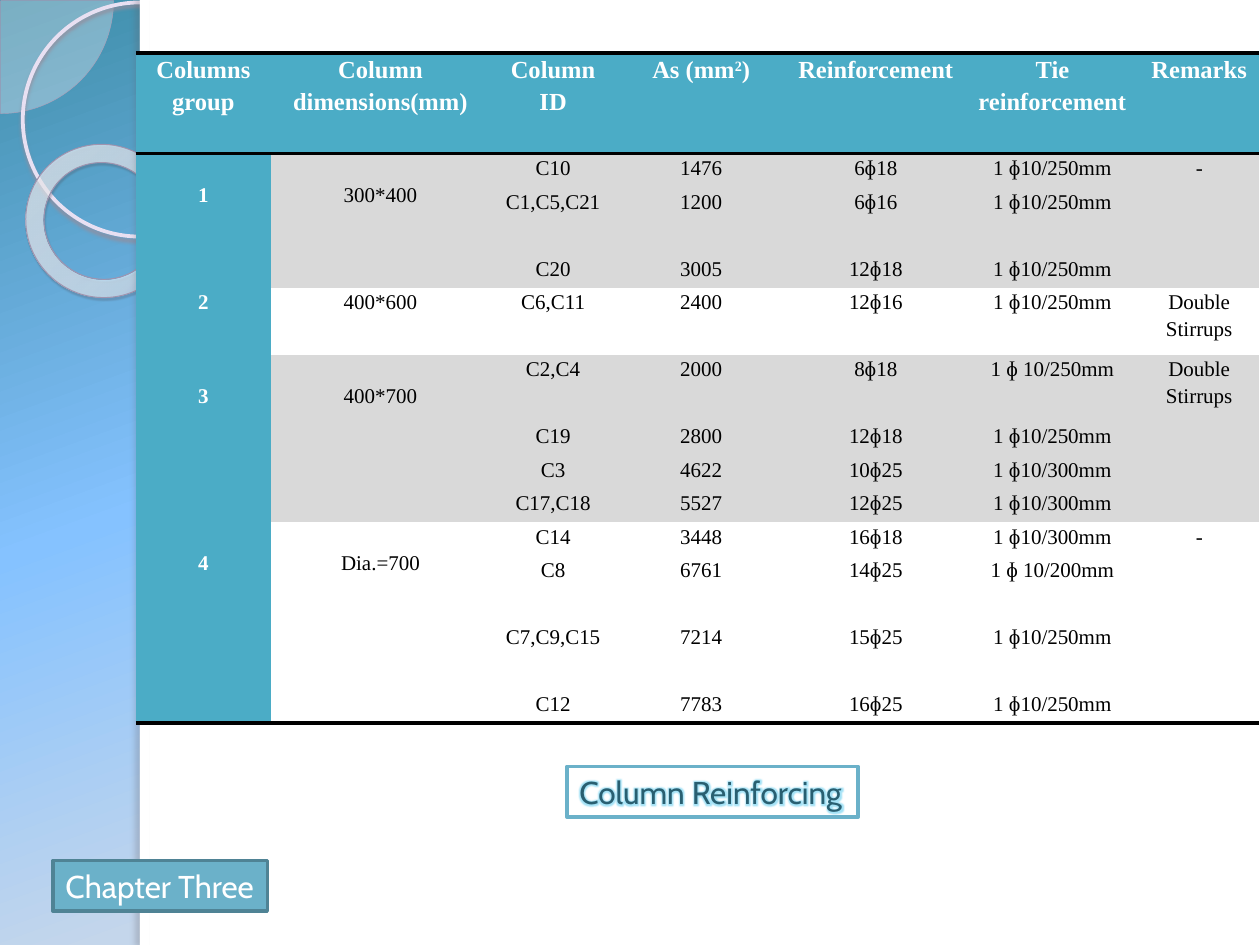
import lxml.etree
import pptx
import pptx.dml.color
import pptx.enum.shapes
import pptx.enum.text
import pptx.oxml
import pptx.oxml.ns
import pptx.util

Cm = pptx.util.Cm
Pt = pptx.util.Pt
qn = pptx.oxml.ns.qn
KIND = pptx.enum.shapes.MSO_SHAPE
ALIGN = pptx.enum.text.PP_ALIGN

HUES = {
    "teal": "4BACC6", "gray": "D9D9D9", "white": "FFFFFF", "black": "000000",
    "tag": "6BB1C9", "edge": "4F8395", "title": "295F71", "glow": "A5E3F7",
    "pie": "F6F4F9", "rim": "ACA0B9", "ring": "E8E0F2", "donut": "A094AF",
}
SKY = [(0, "3E8EA9", 100), (40, "85C2FF", 100), (70, "C4D6EB", 100), (100, "FFEBFA", 100)]
PEARL = [(0, "F9F7FB", 70), (70, "FCFBFE", 55), (100, "B099CA", 60)]

# Table content: "|" marks off raised text; each line is (ID, area, bars, ties, height in lines)
HEADS = ["Columns group", "Column dimensions(mm)", "Column ID", "As (mm|2|)",
         "Reinforcement", "Tie reinforcement", "Remarks"]
WIDTHS = [2.72, 4.42, 2.54, 3.43, 3.61, 3.51, 2.41]
GROUPS = [
    ("1", "300*400", "-", "gray", [
        ("C10", "1476", "6ɸ18", "1 ɸ10/250mm", 1),
        ("C1,C5,C21", "1200", "6ɸ16", "1 ɸ10/250mm", 2),
        ("C20", "3005", "12ɸ18", "1 ɸ10/250mm", 1)]),
    ("2", "400*600", "Double Stirrups", "white", [
        ("C6,C11", "2400", "12ɸ16", "1 ɸ10/250mm", 2)]),
    ("3", "400*700", "Double Stirrups", "gray", [
        ("C2,C4", "2000", "8ɸ18", "1 ɸ 10/250mm", 2),
        ("C19", "2800", "12ɸ18", "1 ɸ10/250mm", 1),
        ("C3", "4622", "10ɸ25", "1 ɸ10/300mm", 1),
        ("C17,C18", "5527", "12ɸ25", "1 ɸ10/300mm", 1)]),
    ("4", "Dia.=700", "-", "white", [
        ("C14", "3448", "16ɸ18", "1 ɸ10/300mm", 1),
        ("C8", "6761", "14ɸ25", "1 ɸ 10/200mm", 2),
        ("C7,C9,C15", "7214", "15ɸ25", "1 ɸ10/250mm", 2),
        ("C12", "7783", "16ɸ25", "1 ɸ10/250mm", 1)]),
]


def hue(name):
    return pptx.dml.color.RGBColor.from_string(HUES[name])


def node(xml):
    """Turn a drawing element without a namespace note into XML."""
    head, sep, rest = xml.partition(" ")
    return pptx.oxml.parse_xml(f"{head} {pptx.oxml.ns.nsdecls('a')} {rest}")


def blend(owner, stops, shade):
    """Swap the solid fill of an owner for a gradient."""
    marks = "".join(
        f'<a:gs pos="{at * 1000}"><a:srgbClr val="{tint}">'
        f'<a:alpha val="{dense * 1000}"/></a:srgbClr></a:gs>'
        for at, tint, dense in stops)
    solid = owner.find(qn("a:solidFill"))
    owner.replace(solid, node(
        f'<a:gradFill rotWithShape="1"><a:gsLst>{marks}</a:gsLst>{shade}</a:gradFill>'))


class Deck:
    body = "Times New Roman"
    label = "Cabin"

    def __init__(self):
        self.show = pptx.Presentation()
        self.show.slide_width, self.show.slide_height = Cm(25.4), Cm(19.05)
        self.slide = self.show.slides.add_slide(self.show.slide_layouts[6])

    def sky(self, stops, angle):
        self.slide.background.fill.solid()
        owner = self.slide._element.find(".//" + qn("p:bgPr"))
        blend(owner, stops, f'<a:lin ang="{angle * 60000}" scaled="0"/>')

    def shape(self, kind, left, top, width, height, fill=None, line=None,
              weight=1, dense=100, shade=None):
        item = self.slide.shapes.add_shape(kind, Cm(left), Cm(top), Cm(width), Cm(height))
        item.shadow.inherit = False
        if fill:
            item.fill.solid()
            item.fill.fore_color.rgb = hue(fill)
            if dense < 100:
                tint = item._element.spPr.find(f"{qn('a:solidFill')}/{qn('a:srgbClr')}")
                tint.append(node(f'<a:alpha val="{dense * 1000}"/>'))
        else:
            item.fill.background()
        if line:
            item.line.color.rgb = hue(line)
            item.line.width = Pt(weight)
        else:
            item.line.fill.background()
        if shade:
            tint, dark, blur, dist, angle = shade
            item._element.spPr.find(qn("a:effectLst")).append(node(
                f'<a:outerShdw blurRad="{Pt(blur)}" dist="{Pt(dist)}" dir="{angle * 60000}" '
                f'algn="tl" rotWithShape="0"><a:srgbClr val="{tint}">'
                f'<a:alpha val="{dark * 1000}"/></a:srgbClr></a:outerShdw>'))
        return item

    def tag(self, text, left, top, width, fill, line, ink, wrap):
        item = self.shape(KIND.RECTANGLE, left, top, width, 1.02, fill, line, 2)
        frame = item.text_frame
        frame.text = text
        frame.word_wrap = wrap
        frame.vertical_anchor = pptx.enum.text.MSO_ANCHOR.TOP
        frame.paragraphs[0].alignment = ALIGN.LEFT
        run = frame.paragraphs[0].runs[0]
        self.font(run, self.label, 18, ink)
        return run

    def font(self, run, name, size, ink, bold=False):
        run.font.name, run.font.size, run.font.bold = name, Pt(size), bold
        run.font.color.rgb = hue(ink)

    def grid(self, left, top, widths, heights):
        table = self.slide.shapes.add_table(
            len(heights), len(widths), Cm(left), Cm(top),
            Cm(sum(widths)), Cm(sum(heights))).table
        table.first_row = table.horz_banding = False
        # Plain style with no grid
        table._tbl.tblPr.find(qn("a:tableStyleId")).text = "{2D5ABB26-0587-4C30-8999-92F81FD0307C}"
        for col, width in zip(table.columns, widths):
            col.width = Cm(width)
        for row, height in zip(table.rows, heights):
            row.height = Cm(height)
        return table

    def cell(self, cell, text, fill, ink="black", size=12, bold=False, drop=0):
        cell.fill.solid()
        cell.fill.fore_color.rgb = hue(fill)
        cell.margin_left = cell.margin_right = Cm(0.18)
        cell.margin_top, cell.margin_bottom = Cm(drop), 0
        para = cell.text_frame.paragraphs[0]
        first, *rest = text.split("|")
        para.text = first
        for part in rest:
            para.add_run().text = part
        para.alignment, para.line_spacing = ALIGN.CENTER, 1.15
        for spot, run in enumerate(para.runs):
            self.font(run, self.body, size, ink, bold)
            if spot % 2:
                run.font._element.set("baseline", "30000")

    def rule(self, cell, *sides):
        for spot, side in enumerate(sides):
            cell._tc.get_or_add_tcPr().insert(spot, node(
                f'<a:ln{side} w="{Pt(2.25)}"><a:solidFill>'
                f'<a:srgbClr val="{HUES["black"]}"/></a:solidFill></a:ln{side}>'))


def main():
    deck = Deck()

    # Side band with rings, then the white page
    deck.sky(SKY, 70)
    pie = deck.shape(KIND.PIE, -2.26, -2.26, 4.55, 4.55, "pie", "rim", 0.25, dense=33)
    pie.adjustments[0], pie.adjustments[1] = 0, 54.02
    deck.shape(KIND.OVAL, 0.46, 0.05, 4.72, 4.72, None, "ring", 2.15,
               shade=("958D9D", 85, 2, 2, 90))
    donut = deck.shape(KIND.DONUT, 0.51, 2.92, 3.12, 3.07, "white", "donut", 0.58,
                       shade=("4A4550", 35, 1, 1.2, 75))
    donut.adjustments[0] = 0.12
    donut.rotation = 38.6
    blend(donut._element.spPr, PEARL,
          '<a:path path="circle"><a:fillToRect l="-408000" t="-50000" '
          'r="508000" b="150000"/></a:path>')
    deck.shape(KIND.RECTANGLE, 2.82, 0, 22.58, 19.05, "white")
    deck.shape(KIND.RECTANGLE, 2.82, 0, 0.2, 19.05, "white",
               shade=("646068", 25, 3, 3, 180))

    # Title tag
    title = deck.tag("Column Reinforcing", 11.43, 15.45, 5.87, "white", "tag", "title", True)
    title.font._element.find(qn("a:solidFill")).addnext(node(
        f'<a:effectLst ><a:glow rad="{Pt(5)}"><a:srgbClr val="{HUES["glow"]}"/>'
        '</a:glow></a:effectLst>'))

    # Table head
    lines = [line for group in GROUPS for line in group[-1]]
    table = deck.grid(2.74, 1.07, WIDTHS, [2.03] + [line[-1] * 1.35 / 2 for line in lines])
    for col, text in enumerate(HEADS):
        deck.cell(table.cell(0, col), text, "teal", "white", 14, True)
        deck.rule(table.cell(0, col), "T", "B")

    # Column groups
    top = 1
    for number, size, remark, fill, rows in GROUPS:
        end = top + len(rows) - 1
        drop = 0.53 if end > top else 0
        for row, line in enumerate(rows, top):
            for col, text in enumerate(line[:-1], 2):
                deck.cell(table.cell(row, col), text, fill)
        for col in (0, 1, 6):
            table.cell(top, col).merge(table.cell(end, col))
        deck.cell(table.cell(top, 0), number, "teal", "white", bold=True, drop=drop)
        deck.cell(table.cell(top, 1), size, fill, drop=drop)
        deck.cell(table.cell(top, 6), remark, fill)
        top = end + 1

    # Closing rule, also on the merged cells of the last group
    for col in range(len(HEADS)):
        deck.rule(table.cell(top - 1, col), "B")
        if col in (0, 1, 6):
            deck.rule(table.cell(top - len(GROUPS[-1][-1]), col), "B")

    # Chapter tag
    deck.tag("Chapter Three", 1.07, 17.35, 4.32, "tag", "edge", "white", False)
    deck.show.save("out.pptx")


if __name__ == "__main__":
    main()
